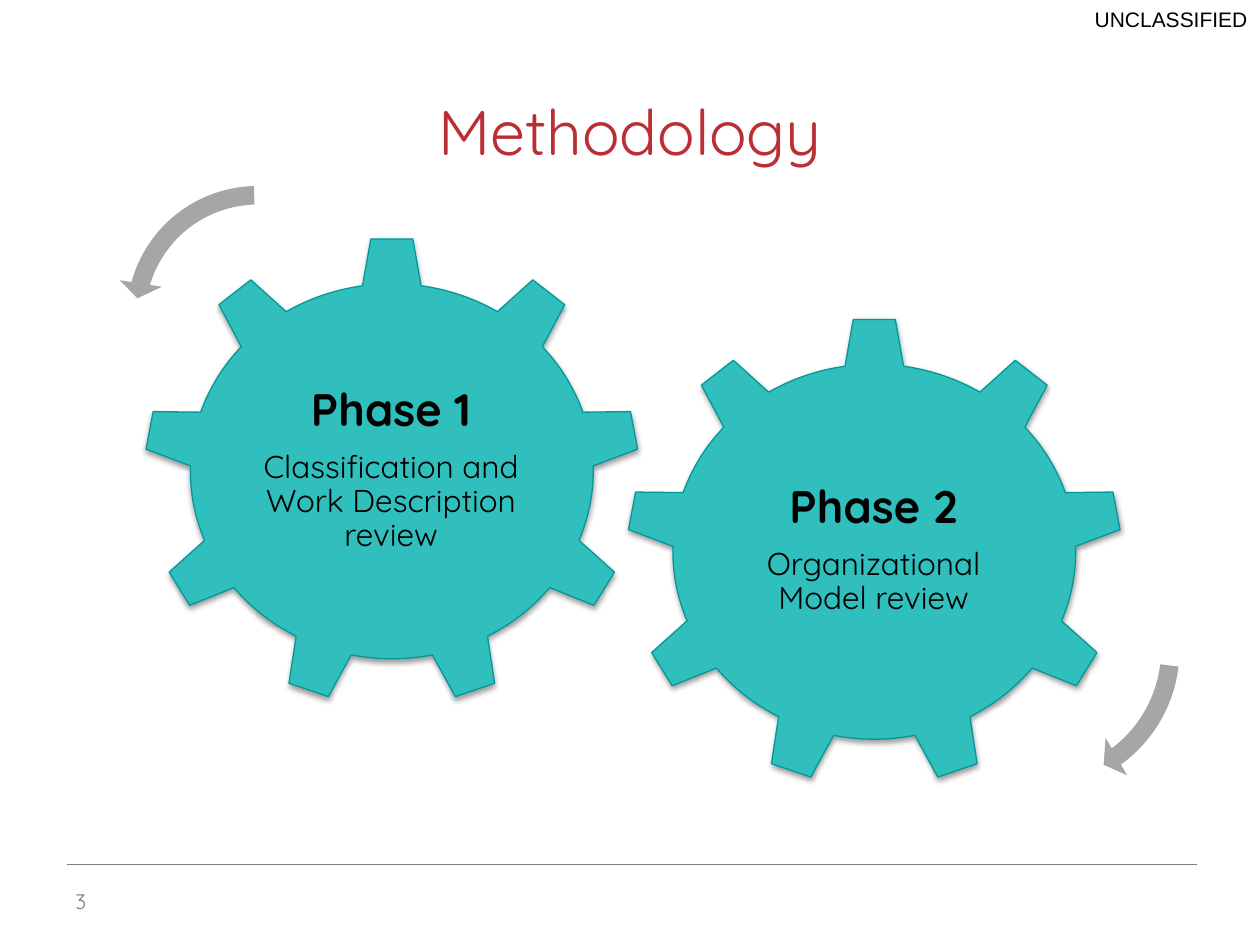
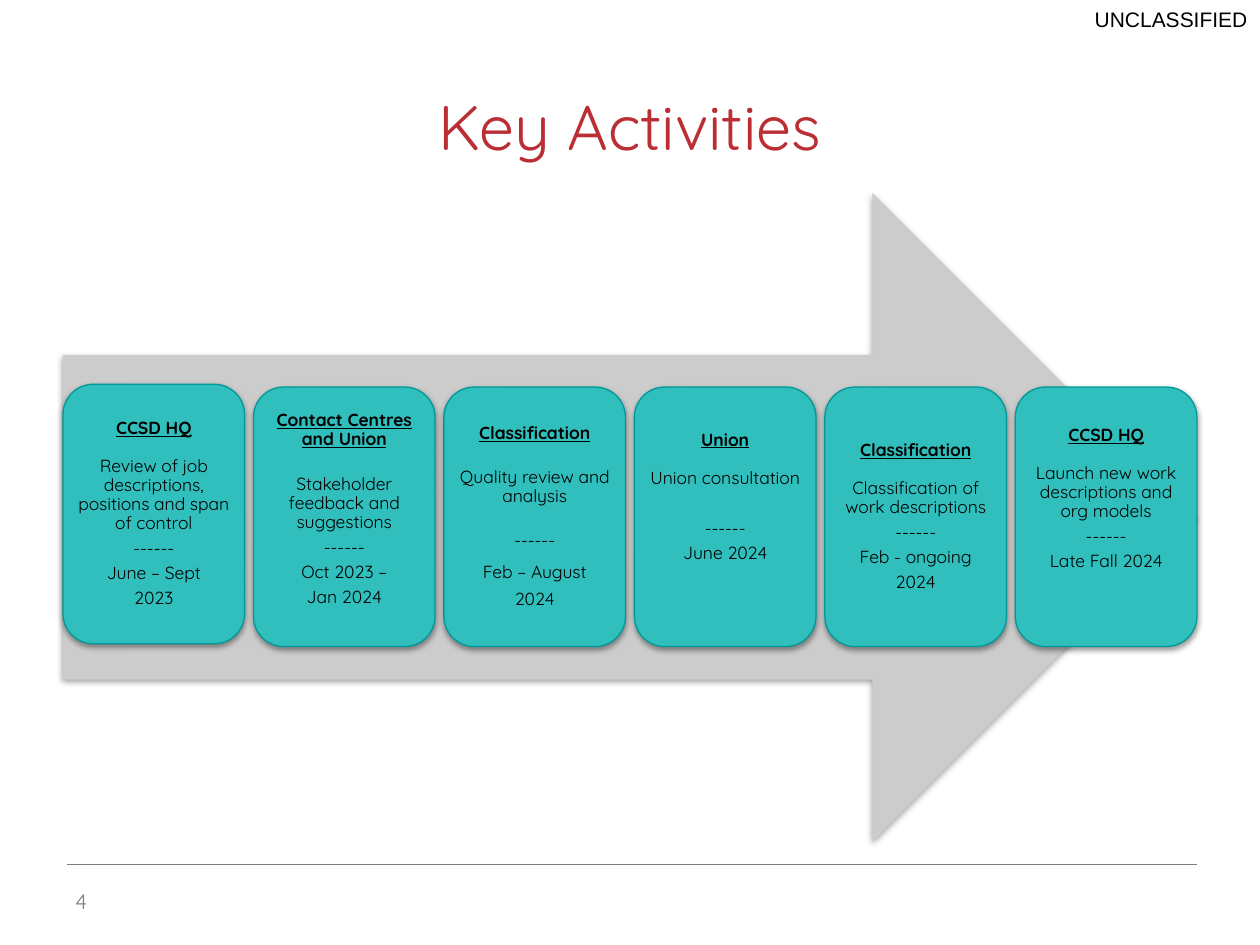
from lxml.etree import SubElement
from pptx import Presentation
from pptx.dml.color import RGBColor
from pptx.enum.shapes import MSO_CONNECTOR as Line, MSO_SHAPE as Shape
from pptx.enum.text import MSO_ANCHOR as Anchor, PP_ALIGN as Align
from pptx.oxml.ns import qn
from pptx.util import Pt

TEAL, EDGE, RED = "30BFBD", "009999", "BA2E34"
BLACK, GREY, PALE, MID = "000000", "7F7F7F", "CCCCCC", "A6A6A6"
FONT = "Quicksand"
INSET = 3

# left, top, heading, body
GEARS = [
    (82.1, 135.4, "Phase 1", "Classification and Work Description review"),
    (357.8, 181.4, "Phase 2", "Organizational Model review"),
]
# shape, left, top, size, rotation, adjustments
SWEEPS = [
    (Shape.LEFT_CIRCULAR_ARROW, 65.5, 99.4, 163.4, 21.1,
     (0.065, 4.3, 104.89, 148.38, 0.075)),
    (Shape.CIRCULAR_ARROW, 504.7, 283, 176.4, 191.7,
     (0.06, 3.94, 133.14, 105.08, 0.07)),
]
# Gaps are the space after a part; top and foot are text insets.
BASE = dict(top=INSET, foot=INSET, rise=0, head_gap=11, body_gap=3.5,
            dash_gap=3.5, lead=0.9)
CARDS = [
    dict(head="CCSD HQ", dates=["June – Sept", "2023"], rise=1.6,
         body="Review of job descriptions, positions and span of control"),
    dict(head="Contact Centres and Union", dates=["Oct 2023 –", "Jan 2024"],
         body="Stakeholder feedback and suggestions",
         head_gap=15, top=0, foot=8.6),
    dict(head="Classification", dates=["Feb – August", "2024"],
         body="Quality review and analysis",
         head_gap=14.5, body_gap=14.5, dash_gap=6, lead=1),
    dict(head="Union", dates=["June 2024"], body="Union consultation",
         body_gap=18, top=0, foot=22.3),
    dict(head="Classification", dates=["Feb - ongoing", "2024"],
         body="Classification of work descriptions"),
    dict(head="CCSD HQ", dates=["Late Fall 2024"],
         body="Launch new work descriptions and org models",
         top=0, foot=20.2),
]


def color(code):
    return RGBColor.from_string(code)


def write(frame, rows, align=Align.CENTER, ink=BLACK, font=FONT,
          anchor=Anchor.MIDDLE, inset=None):
    """Fill a frame; a row is text, size, bold, underline, leading, gap."""
    frame.word_wrap = True
    frame.vertical_anchor = anchor
    if inset:
        (frame.margin_left, frame.margin_top,
         frame.margin_right, frame.margin_bottom) = map(Pt, inset)
    for i, (text, size, bold, under, lead, gap) in enumerate(rows):
        para = frame.add_paragraph() if i else frame.paragraphs[0]
        para.text = text
        para.alignment = align
        para.line_spacing = lead
        para.space_before, para.space_after = Pt(0), Pt(gap)
        for run in para.runs:
            run.font.name, run.font.size = font, Pt(size)
            run.font.bold, run.font.underline = bold, under
            run.font.color.rgb = color(ink)


def label(slide, box, text, size, **style):
    frame = slide.shapes.add_textbox(*map(Pt, box)).text_frame
    write(frame, [(text, size, False, False, 1.0, 0)], **style)


def draw(slide, kind, box, fill, edge=None, shade=True):
    shape = slide.shapes.add_shape(kind, *map(Pt, box))
    shape.fill.solid()
    shape.fill.fore_color.rgb = color(fill)
    if edge:
        shape.line.color.rgb = color(edge)
        shape.line.width = Pt(0.75)
    else:
        shape.line.fill.background()
    shape.shadow.inherit = False
    if shade:
        effect = shape._element.spPr.find(qn("a:effectLst"))
        drop = SubElement(effect, qn("a:outerShdw"), blurRad=str(Pt(3.15)),
                          dist=str(Pt(1.6)), dir="5400000", rotWithShape="0")
        tint = SubElement(drop, qn("a:srgbClr"), val=BLACK)
        SubElement(tint, qn("a:alpha"), val="38000")
    return shape


def start(deck, title, top, number):
    """Add a slide with the shared rule, marking, title and number."""
    slide = deck.slides.add_slide(deck.slide_layouts[6])
    rule = slide.shapes.add_connector(
        Line.STRAIGHT, Pt(38.2), Pt(494), Pt(684), Pt(494))
    rule.line.color.rgb = color(GREY)
    rule.line.width = Pt(0.25)
    SubElement(rule._element.spPr, qn("a:effectLst"))
    label(slide, (0, 0, 720, 21.6), "UNCLASSIFIED", 12, align=Align.RIGHT,
          font="Arial", anchor=Anchor.TOP)
    label(slide, (36, top, 648, 77.8), title, 36, ink=RED,
          anchor=Anchor.BOTTOM)
    label(slide, (36, 500.4, 77, 28.8), str(number), 12, align=Align.LEFT,
          ink=GREY)
    return slide


def gears(deck):
    slide = start(deck, "Methodology", 21.6, 3)
    for left, top, head, body in GEARS:
        draw(slide, Shape.GEAR_9_TEETH if hasattr(Shape, "GEAR_9_TEETH")
             else Shape.GEAR_9, (left, top, 283.7, 267.8), TEAL, EDGE)
        box = (left + 55.4, top + 62.6, 172, 137.5)
        frame = slide.shapes.add_textbox(*map(Pt, box)).text_frame
        write(frame, [(head, 26, True, False, 1.0, 9),
                      (body, 18, False, False, 0.9, 6.3)], inset=[INSET] * 4)
    for kind, left, top, size, turn, adjust in SWEEPS:
        sweep = draw(slide, kind, (left, top, size, size), MID, shade=False)
        sweep.rotation = turn
        for i, value in enumerate(adjust):
            sweep.adjustments[i] = value


def cards(deck):
    slide = start(deck, "Key Activities", 18.7, 4)
    left, width, wide = 36, 648, 103.8
    draw(slide, Shape.RIGHT_ARROW, (left, 110.2, width, 370.8), PALE)
    step = (width - wide) / (len(CARDS) - 1)
    for i, part in enumerate(CARDS):
        card = BASE | part
        box = (left + i * step, 221.2 - card["rise"], wide, 148.3)
        shape = draw(slide, Shape.ROUNDED_RECTANGLE, box, TEAL, EDGE)
        rows = [(card["head"], 10, True, True, 0.9, card["head_gap"]),
                (card["body"], 10, False, False, 0.9, card["body_gap"]),
                ("------", 10, False, False, 0.9, card["dash_gap"])]
        rows += [(date, 10, False, False, card["lead"], 3.5)
                 for date in card["dates"]]
        write(shape.text_frame, rows,
              inset=(INSET, card["top"], INSET, card["foot"]))


def main():
    deck = Presentation()
    deck.slide_width, deck.slide_height = Pt(720), Pt(540)
    gears(deck)
    cards(deck)
    deck.save("out.pptx")


if __name__ == "__main__":
    main()
